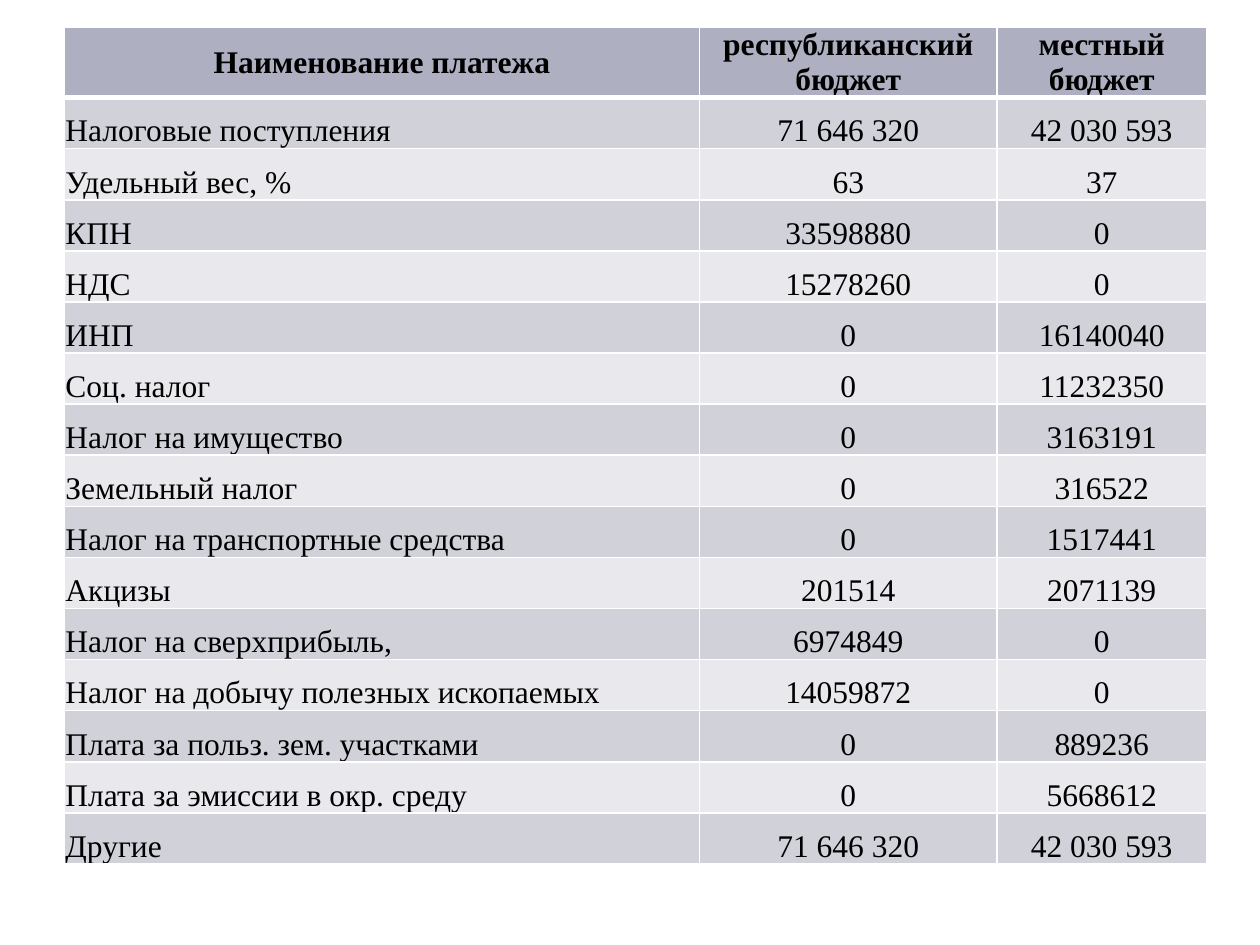
from lxml import etree
from pptx import Presentation
from pptx import util as u
from pptx.dml.color import RGBColor
from pptx.enum import text
from pptx.oxml.ns import qn

FONT = "Times New Roman"
HEADER_FILL, ODD_FILL, EVEN_FILL = "AEB0C1", "D1D1DA", "E9E9ED"
COLUMN_WIDTHS = (12.8, 6, 4.22)
ROW_HEIGHT = 1.03

HEADER = ("Наименование платежа", "республиканский бюджет", "местный бюджет")
PAYMENTS = [
    ("Налоговые поступления", "71 646 320", "42 030 593"),
    ("Удельный вес, %", "63", "37"),
    ("КПН", "33598880", "0"),
    ("НДС", "15278260", "0"),
    ("ИНП", "0", "16140040"),
    ("Соц. налог", "0", "11232350"),
    ("Hалог на имущество", "0", "3163191"),
    ("Земельный налог", "0", "316522"),
    ("Налог на транспортные средства", "0", "1517441"),
    ("Акцизы", "201514", "2071139"),
    ("Налог на сверхприбыль,", "6974849", "0"),
    ("Налог на добычу полезных ископаемых", "14059872", "0"),
    ("Плата за польз. зем. участками", "0", "889236"),
    ("Плата за эмиссии в окр. среду", "0", "5668612"),
    ("Другие", "71 646 320", "42 030 593"),
]


def rgb(value):
    return RGBColor.from_string(value)


def write(tf, words, size=18, bold=False, color="000000", align=text.PP_ALIGN.LEFT):
    p = tf.paragraphs[0]
    p.alignment = align
    r = p.add_run()
    r.text = words
    r.font.name = FONT
    r.font.size = u.Pt(size)
    r.font.bold = bold
    r.font.color.rgb = rgb(color)


def set_borders(cell, color="FFFFFF", top=1, bottom=1):
    """Draw the four cell borders, widths in points."""
    tc_pr = cell._tc.get_or_add_tcPr()
    for side, width in (("L", 1), ("R", 1), ("T", top), ("B", bottom)):
        ln = etree.SubElement(tc_pr, qn(f"a:ln{side}"), w=str(u.Pt(width)))
        fill = etree.SubElement(ln, qn("a:solidFill"))
        etree.SubElement(fill, qn("a:srgbClr"), val=color)


def format_cell(cell, fill, anchor):
    cell.fill.solid()
    cell.fill.fore_color.rgb = rgb(fill)
    cell.vertical_anchor = anchor
    cell.margin_left = cell.margin_right = cell.margin_top = u.Cm(0.02)
    cell.margin_bottom = 0


def add_budget_table(s):
    rows = [HEADER, *PAYMENTS]
    frame = s.shapes.add_table(len(rows), len(HEADER), u.Cm(1.3), u.Cm(0.54),
                               u.Cm(sum(COLUMN_WIDTHS)), u.Cm(17))
    table = frame.table
    for column, width in zip(table.columns, COLUMN_WIDTHS):
        column.width = u.Cm(width)
    for i, row in enumerate(rows):
        table.rows[i].height = u.Cm(ROW_HEIGHT)
        is_header = i == 0
        fill = HEADER_FILL if is_header else ODD_FILL if i % 2 else EVEN_FILL
        anchor = text.MSO_ANCHOR.MIDDLE if is_header else text.MSO_ANCHOR.BOTTOM
        for j, words in enumerate(row):
            cell = table.cell(i, j)
            set_borders(cell, top=3 if i == 1 else 1, bottom=3 if is_header else 1)
            format_cell(cell, fill, anchor)
            centred = is_header or j > 0
            write(cell.text_frame, words, bold=is_header,
                  align=text.PP_ALIGN.CENTER if centred else text.PP_ALIGN.LEFT)
    frame.height = u.Cm(17)  # leaves room for the two-line header


def main():
    prs = Presentation()
    prs.slide_width, prs.slide_height = u.Cm(25.4), u.Cm(19.05)
    s = prs.slides.add_slide(prs.slide_layouts[6])
    add_budget_table(s)
    prs.save("out.pptx")


if __name__ == "__main__":
    main()
